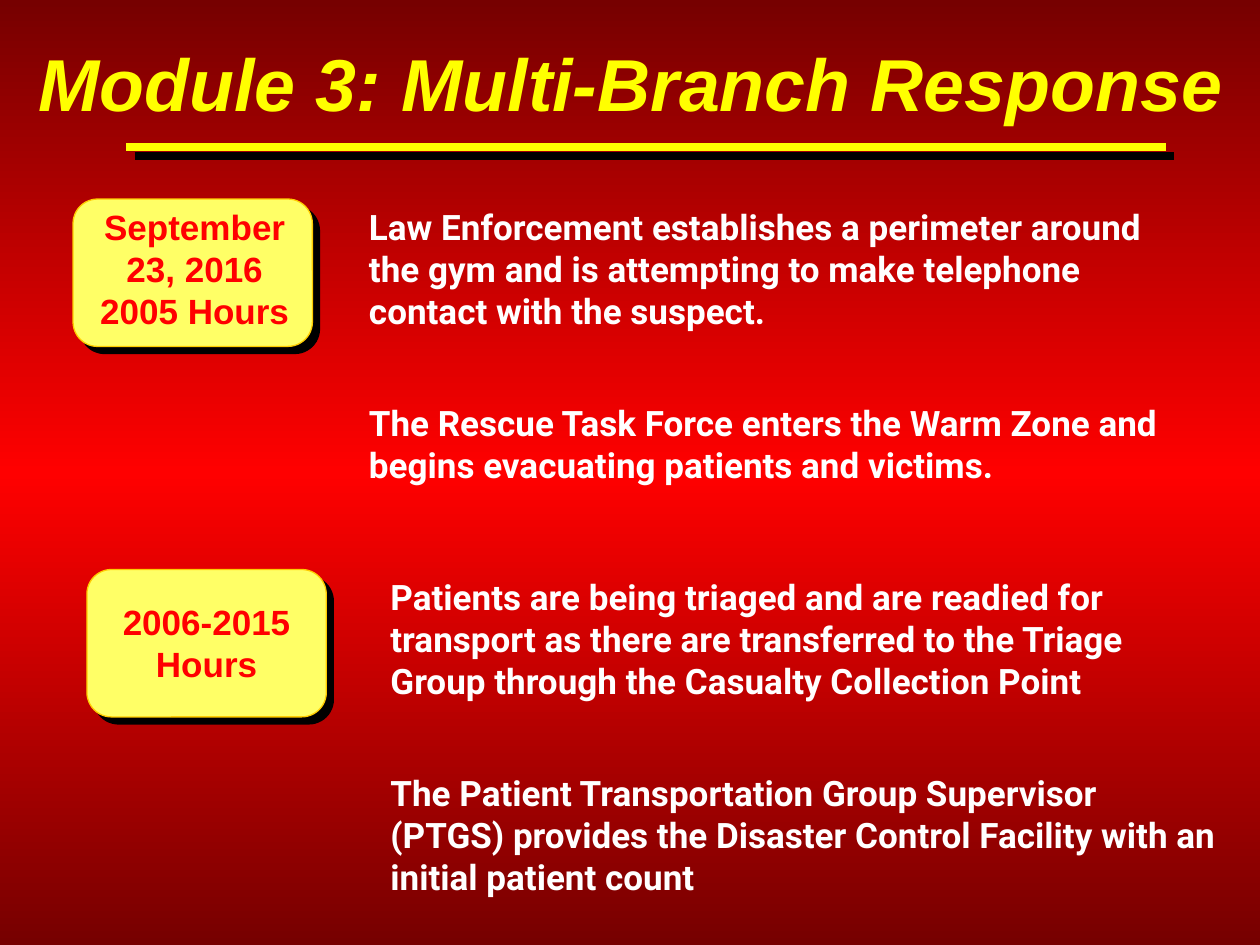
from copy import deepcopy
from dataclasses import dataclass

from lxml.etree import SubElement
from pptx import Presentation
from pptx.dml.color import RGBColor
from pptx.enum.shapes import MSO_CONNECTOR, MSO_SHAPE
from pptx.enum.text import MSO_ANCHOR, MSO_AUTO_SIZE, PP_ALIGN
from pptx.oxml.ns import qn
from pptx.util import Inches, Pt


@dataclass(frozen=True)
class Theme:
    dark: str = "760000"
    red: str = "FF0000"
    yellow: str = "FFFF00"
    card: str = "FFFF66"
    card_border: str = "FFCC00"
    white: str = "FFFFFF"
    shadow: str = "000000"
    heading_font: str = "Arial"
    body_font: str = "Roboto"
    title_size: int = 42
    text_size: int = 20
    paragraph_gap: int = 40


class SlideBuilder:
    def __init__(self, slide, theme):
        self.slide = slide
        self.theme = theme

    def background(self):
        fill = self.slide.background.fill
        fill.gradient()
        fill.gradient_angle = 270
        stop_list = self.slide.element.find(".//" + qn("a:gsLst"))
        stop_list.append(deepcopy(stop_list[0]))
        colors = (self.theme.dark, self.theme.red, self.theme.dark)
        for stop, position, color in zip(fill.gradient_stops, (0, 0.5, 1), colors):
            stop.position = position
            stop.color.rgb = RGBColor.from_string(color)

    def shadow(self, properties, distance):
        """Add a hard shadow towards the lower right."""
        for effects in properties.findall(qn("a:effectLst")):
            properties.remove(effects)
        effects = SubElement(properties, qn("a:effectLst"))
        outer = SubElement(effects, qn("a:outerShdw"), dist=str(Pt(distance)),
                           dir="2700000", algn="ctr", rotWithShape="0")
        SubElement(outer, qn("a:srgbClr"), val=self.theme.shadow)

    def text(self, box, lines, font, size, color, align=PP_ALIGN.LEFT,
             italic=False, wrap=True, gap=0):
        shape = self.slide.shapes.add_textbox(*map(Inches, box))
        frame = shape.text_frame
        frame.word_wrap = wrap
        frame.auto_size = MSO_AUTO_SIZE.SHAPE_TO_FIT_TEXT
        frame.vertical_anchor = MSO_ANCHOR.TOP
        frame.text = "\n".join(lines)
        for index, paragraph in enumerate(frame.paragraphs):
            paragraph.alignment = align
            paragraph.space_before = Pt(gap if index else 0)
            for run in paragraph.runs:
                run.font.name = font
                run.font.size = Pt(size)
                run.font.bold = True
                run.font.italic = italic
                run.font.color.rgb = RGBColor.from_string(color)
        return shape

    def title(self, box, title):
        self.text(box, [title], self.theme.heading_font, self.theme.title_size,
                  self.theme.yellow, PP_ALIGN.CENTER, italic=True)

    def rule(self, left, right, top):
        line = self.slide.shapes.add_connector(
            MSO_CONNECTOR.STRAIGHT, *map(Inches, (left, top, right, top)))
        line.line.color.rgb = RGBColor.from_string(self.theme.yellow)
        line.line.width = Pt(4.5)
        self.shadow(line.element.spPr, 7.1)

    def time_card(self, left, top, label_box, lines):
        card = self.slide.shapes.add_shape(
            MSO_SHAPE.ROUNDED_RECTANGLE, *map(Inches, (left, top, 1.9, 1.17)))
        card.fill.solid()
        card.fill.fore_color.rgb = RGBColor.from_string(self.theme.card)
        card.line.color.rgb = RGBColor.from_string(self.theme.card_border)
        card.line.width = Pt(0.75)
        self.shadow(card.element.spPr, 5.7)
        label = self.text(label_box, lines, self.theme.heading_font,
                          self.theme.text_size, self.theme.red,
                          PP_ALIGN.CENTER, wrap=False)
        self.slide.shapes.add_group_shape([card, label])

    def events(self, box, paragraphs):
        self.text(box, paragraphs, self.theme.body_font, self.theme.text_size,
                  self.theme.white, gap=self.theme.paragraph_gap)


def main():
    presentation = Presentation()
    presentation.slide_width = Inches(10)
    presentation.slide_height = Inches(7.5)
    slide = presentation.slides.add_slide(presentation.slide_layouts[6])
    builder = SlideBuilder(slide, Theme())

    # Background and heading
    builder.background()
    builder.title((0.17, 0.25, 9.67, 0.81), "Module 3: Multi-Branch Response ")
    builder.rule(1, 9.25, 1.17)

    # First time period
    builder.time_card(0.58, 1.58, (0.69, 1.58, 1.71, 1.11),
                      ["September ", "23, 2016", "2005 Hours"])
    builder.events((2.83, 1.58, 6.75, 2.39), [
        "Law Enforcement establishes a perimeter around the gym and is "
        "attempting to make telephone contact with the suspect.",
        "The Rescue Task Force enters the Warm Zone and begins evacuating "
        "patients and victims.",
    ])

    # Second time period
    builder.time_card(0.69, 4.52, (0.87, 4.72, 1.54, 0.77),
                      ["2006-2015", "Hours"])
    builder.events((3, 4.52, 6.75, 2.73), [
        "Patients are being triaged and are readied for transport as there "
        "are transferred to the Triage Group through the Casualty Collection Point",
        "The Patient Transportation Group Supervisor (PTGS) provides the "
        "Disaster Control Facility with an initial patient count",
    ])

    presentation.save("out.pptx")


if __name__ == "__main__":
    main()
